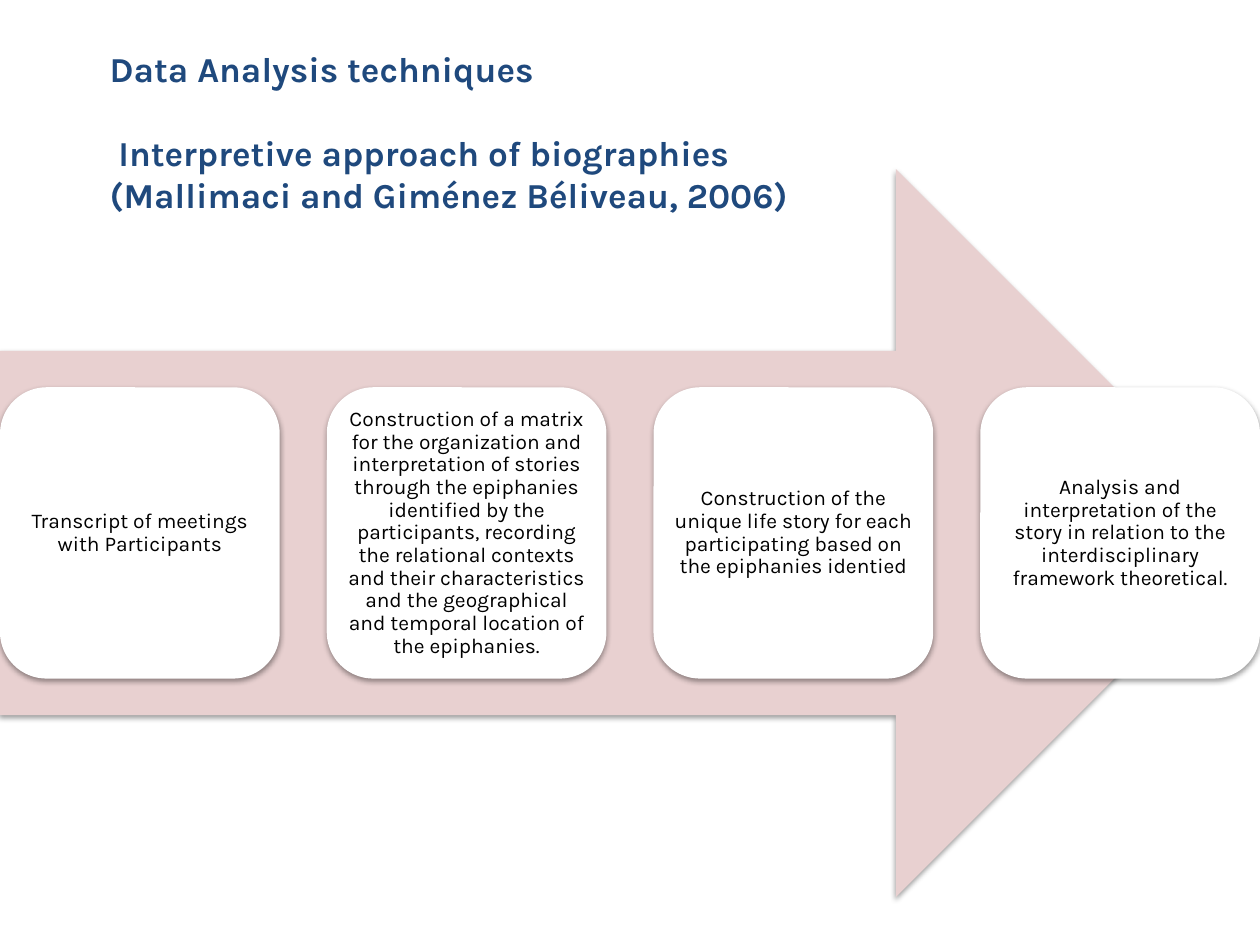
from dataclasses import dataclass

from lxml.etree import SubElement
from pptx import Presentation
from pptx.dml.color import RGBColor as RGB
from pptx.enum.shapes import MSO_SHAPE as Shape
from pptx.enum.text import MSO_ANCHOR as Anchor, PP_ALIGN as Align
from pptx.oxml.ns import qn
from pptx.util import Inches, Pt


@dataclass(frozen=True)
class Theme:
    font: str = "Karla"
    navy: str = "1F497D"
    pink: str = "E8D0D0"
    white: str = "FFFFFF"
    black: str = "000000"
    head: int = 20
    body: int = 12


THEME = Theme()

TITLE = [
    ("Data Analysis techniques", 0, 0),
    ("Interpretive approach of biographies", 0.07, 24),
    ("(Mallimaci and Giménez Béliveau, 2006)", 0, 0),
]

STEPS = [
    "Transcript of meetings with Participants",
    "Construction of a matrix for the organization and interpretation of stories "
    "through the epiphanies identified by the participants, recording the relational "
    "contexts and their characteristics and the geographical and temporal location "
    "of the epiphanies.",
    "Construction of the unique life story for each participating based on the "
    "epiphanies identied",
    "Analysis and interpretation of the story in relation to the interdisciplinary "
    "framework theoretical.",
]


def add_run(para, text, size, color, bold=False):
    run = para.add_run()
    run.text = text
    font = run.font
    font.name, font.size, font.bold = THEME.font, Pt(size), bold
    font.color.rgb = RGB.from_string(color)


def add_shadow(shape):
    shape.shadow.inherit = False
    effects = shape._element.spPr.find(qn("a:effectLst"))
    outer = SubElement(effects, qn("a:outerShdw"), blurRad=str(Pt(3.1)),
                       dist=str(Pt(1.6)), dir="5400000", rotWithShape="0")
    color = SubElement(outer, qn("a:srgbClr"), val=THEME.black)
    SubElement(color, qn("a:alpha"), val="38000")


def add_block(slide, kind, color, left, top, width, height):
    block = slide.shapes.add_shape(
        kind, Inches(left), Inches(top), Inches(width), Inches(height))
    block.fill.solid()
    block.fill.fore_color.rgb = RGB.from_string(color)
    block.line.fill.background()
    add_shadow(block)
    return block


def add_title(slide, left, top, width, height):
    box = slide.shapes.add_textbox(
        Inches(left), Inches(top), Inches(width), Inches(height))
    frame = box.text_frame
    frame.word_wrap = True
    frame.margin_left = Inches(0.87)
    frame.margin_top = Inches(0.38)
    for i, (text, indent, gap) in enumerate(TITLE):
        para = frame.paragraphs[0] if i == 0 else frame.add_paragraph()
        if indent:
            para._p.get_or_add_pPr().set("marL", str(Inches(indent)))
        if gap:
            para.space_before = Pt(gap)
        add_run(para, text, THEME.head, THEME.navy, True)


def add_step(slide, text, left, top, width, height):
    card = add_block(slide, Shape.ROUNDED_RECTANGLE, THEME.white,
                     left, top, width, height)
    frame = card.text_frame
    frame.word_wrap = True
    frame.vertical_anchor = Anchor.MIDDLE
    frame.margin_left = frame.margin_right = Inches(0.05)
    frame.margin_top = frame.margin_bottom = Inches(0.05)
    para = frame.paragraphs[0]
    para.alignment = Align.CENTER
    para.line_spacing = 0.9
    add_run(para, text, THEME.body, THEME.black)


def add_process(slide, left, top, width, height):
    add_block(slide, Shape.RIGHT_ARROW, THEME.pink, left, top, width, height)
    wide, high = 2.22, height * 0.4
    pitch = (width - wide) / (len(STEPS) - 1)
    for i, text in enumerate(STEPS):
        add_step(slide, text, left + i * pitch, top + (height - high) / 2, wide, high)


def main():
    deck = Presentation()
    deck.slide_width, deck.slide_height = Inches(10), Inches(7.5)
    slide = deck.slides.add_slide(deck.slide_layouts[6])
    add_title(slide, 0, 0, 8.66, 2.86)
    add_process(slide, 0, 1.34, 10, 5.78)
    deck.save("out.pptx")


if __name__ == "__main__":
    main()
